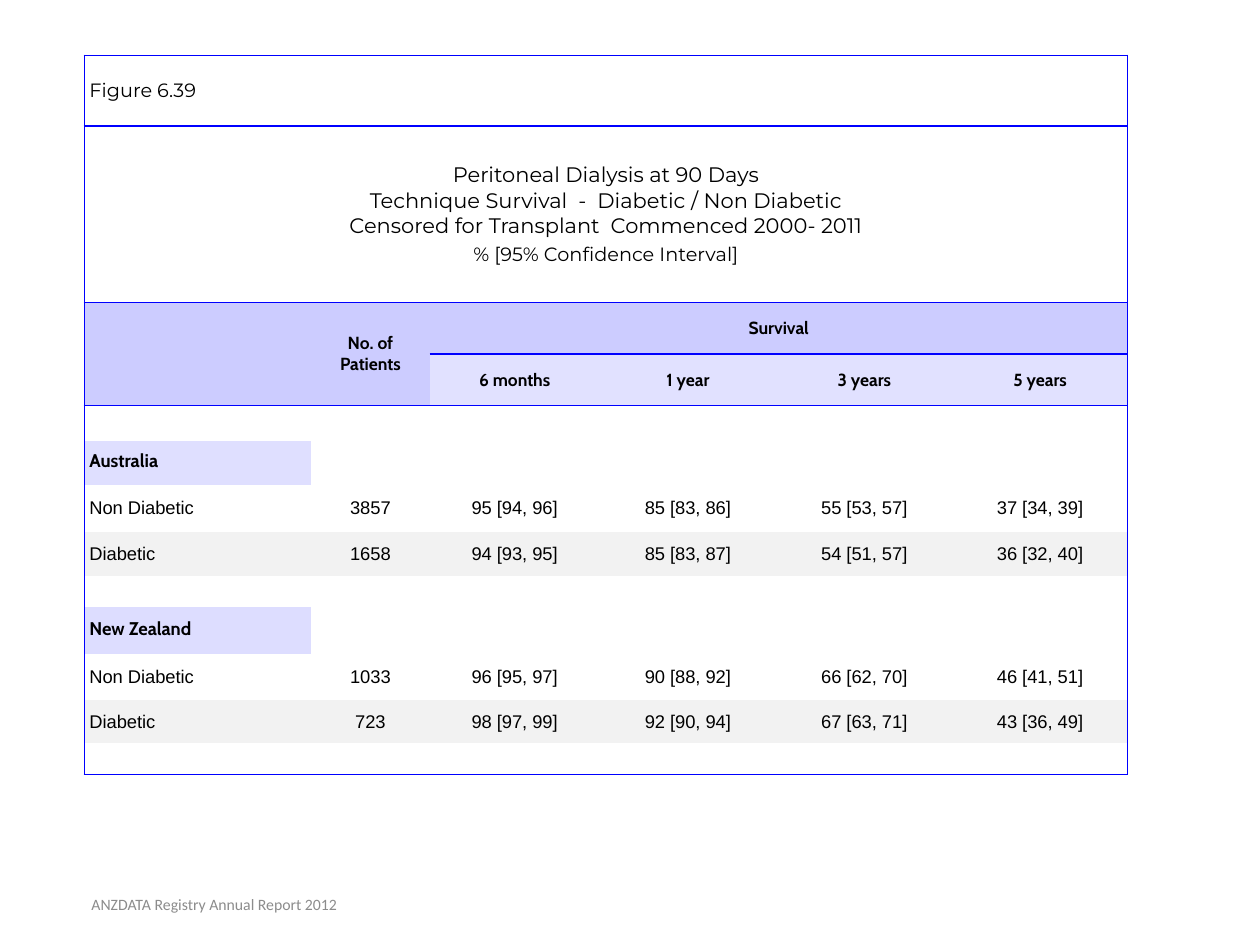
import pptx
import pptx.dml.color
import pptx.enum.text
import pptx.util
from dataclasses import dataclass
from lxml import etree

Inches = pptx.util.Inches
Pt = pptx.util.Pt
ALIGN = pptx.enum.text.PP_ALIGN
MIDDLE = pptx.enum.text.MSO_ANCHOR.MIDDLE
A = "{http://schemas.openxmlformats.org/drawingml/2006/main}"


@dataclass(frozen=True)
class Theme:
    rule: str = "0000FF"
    header: str = "CCCCFF"
    subheader: str = "E1E1FF"
    australia: str = "DFDFFF"
    new_zealand: str = "DDDDFF"
    band: str = "F2F2F2"
    ink: str = "000000"
    muted: str = "8C8C8C"
    title_font: str = "Montserrat"
    head_font: str = "Cabin"
    body_font: str = "Arial"
    footer_font: str = "Calibri"
    title: float = 12
    label: float = 11
    body: float = 10.5
    head: float = 10
    footer: float = 9
    empty: float = 6


class SurvivalSlide:
    def __init__(self, prs, theme):
        self.theme = theme
        self.s = prs.slides.add_slide(prs.slide_layouts[6])

    def add_lines(self, tf, lines, font, size, color=None, bold=False,
                  align=ALIGN.CENTER, **spacing):
        """Add one paragraph per line, starting with the first empty one."""
        for line in lines:
            p = tf.paragraphs[0]
            if p.runs:
                p = tf.add_paragraph()
            for name, value in {"alignment": align, **spacing}.items():
                setattr(p, name, value)
            r = p.add_run()
            r.text = line
            fmt = {"name": font, "size": Pt(size), "bold": bold}
            for name, value in fmt.items():
                setattr(r.font, name, value)
            r.font.color.rgb = pptx.dml.color.RGBColor.from_string(color or self.theme.ink)

    def text_box(self, left, top, width, height, lines, **style):
        box = self.s.shapes.add_textbox(Inches(left), Inches(top), Inches(width), Inches(height))
        tf = box.text_frame
        tf.word_wrap = True
        tf.vertical_anchor = MIDDLE
        self.add_lines(tf, lines, **style)

    def table(self, left, top, widths, heights, merges):
        frame = self.s.shapes.add_table(len(heights), len(widths), Inches(left), Inches(top),
                                        Inches(sum(widths)), Inches(sum(heights)))
        table = frame.table
        table.first_row = table.horz_banding = False
        for column, width in zip(table.columns, widths):
            column.width = Inches(width)
        for row, height in zip(table.rows, heights):
            row.height = Inches(height)
        for first, last in merges:
            table.cell(*first).merge(table.cell(*last))
        for cell in table.iter_cells():
            margin = Inches(0.02)
            fmt = {"vertical_anchor": MIDDLE, "margin_left": Inches(0.04),
                   "margin_right": Inches(0.04), "margin_top": margin, "margin_bottom": margin}
            for name, value in fmt.items():
                setattr(cell, name, value)
            # Keeps empty cells from stretching their row
            etree.SubElement(cell.text_frame.paragraphs[0]._p, A + "endParaRPr",
                             sz=str(int(self.theme.empty * 100)))
        return table

    def borders(self, cell, edges):
        """Rule the edges that are true and clear the others."""
        tc_pr = cell._tc.get_or_add_tcPr()
        for side, ruled in edges.items():
            ln = etree.SubElement(tc_pr, A + "ln" + side, w=str(Pt(1)))
            if ruled:
                fill = etree.SubElement(ln, A + "solidFill")
                etree.SubElement(fill, A + "srgbClr", val=self.theme.rule)
            else:
                etree.SubElement(ln, A + "noFill")

    def fill(self, cell, color):
        if color:
            cell.fill.solid()
            cell.fill.fore_color.rgb = pptx.dml.color.RGBColor.from_string(color)
        else:
            cell.fill.background()


def main():
    t = Theme()
    prs = pptx.Presentation()
    prs.slide_width, prs.slide_height = Inches(10), Inches(7.5)
    slide = SurvivalSlide(prs, t)

    slide.text_box(0.2, 6.98, 3, 0.4, ["ANZDATA Registry Annual Report 2012"],
                   font=t.footer_font, size=t.footer, color=t.muted)

    widths = [1.8, 0.94, 1.35, 1.4, 1.4, 1.39]
    heights = [0.56, 1.4, 0.41, 0.41, 0.28, 0.35, 0.37, 0.35, 0.25, 0.37, 0.37, 0.34, 0.25]
    merges = [((0, 0), (0, 5)), ((1, 0), (1, 5)), ((2, 0), (3, 0)),
              ((2, 1), (3, 1)), ((2, 2), (2, 5))]
    table = slide.table(0.67, 0.44, widths, heights, merges)

    fills = {(row, col): t.header for row in (2, 3) for col in range(6)}
    fills.update({(3, col): t.subheader for col in range(2, 6)})
    fills.update({(row, col): t.band for row in (7, 11) for col in range(6)})
    fills.update({(5, 0): t.australia, (9, 0): t.new_zealand})

    def ruled_above(row, col):
        return row in (0, 1, 2, 4, len(heights)) or (row == 3 and col >= 2)

    for row in range(len(heights)):
        for col in range(len(widths)):
            cell = table.cell(row, col)
            high, wide = (cell.span_height, cell.span_width) if cell.is_merge_origin else (1, 1)
            slide.borders(cell, {"L": col == 0, "R": col + wide == len(widths),
                                 "T": ruled_above(row, col), "B": ruled_above(row + high, col)})
            slide.fill(cell, fills.get((row, col)))

    def put(row, col, *lines, **style):
        slide.add_lines(table.cell(row, col).text_frame, lines, **style)

    put(0, 0, "Figure 6.39", font=t.title_font, size=t.label, align=ALIGN.LEFT)
    put(1, 0, "Peritoneal Dialysis at 90 Days",
        "Technique Survival  -  Diabetic / Non Diabetic",
        "Censored for Transplant  Commenced 2000- 2011", font=t.title_font, size=t.title)
    put(1, 0, "% [95% Confidence Interval]", font=t.title_font, size=t.label,
        space_before=Pt(2), space_after=Pt(2))

    head = {"font": t.head_font, "size": t.head, "bold": True}
    put(2, 1, "No. of", "Patients", **head)
    put(2, 2, "Survival", **head)
    for col, period in enumerate(["6 months", "1 year", "3 years", "5 years"], 2):
        put(3, col, period, **head)

    regions = {
        5: ("Australia",
            ["Non Diabetic", "3857", "95 [94, 96]", "85 [83, 86]", "55 [53, 57]", "37 [34, 39]"],
            ["Diabetic", "1658", "94 [93, 95]", "85 [83, 87]", "54 [51, 57]", "36 [32, 40]"]),
        9: ("New Zealand",
            ["Non Diabetic", "1033", "96 [95, 97]", "90 [88, 92]", "66 [62, 70]", "46 [41, 51]"],
            ["Diabetic", "723", "98 [97, 99]", "92 [90, 94]", "67 [63, 71]", "43 [36, 49]"]),
    }
    for top, (region, *groups) in regions.items():
        put(top, 0, region, font=t.head_font, size=t.body, bold=True,
            align=ALIGN.LEFT, line_spacing=0.75)
        for row, values in enumerate(groups, top + 1):
            for col, value in enumerate(values):
                put(row, col, value, font=t.body_font, size=t.body,
                    align=ALIGN.CENTER if col else ALIGN.LEFT)

    prs.save("out.pptx")


if __name__ == "__main__":
    main()
